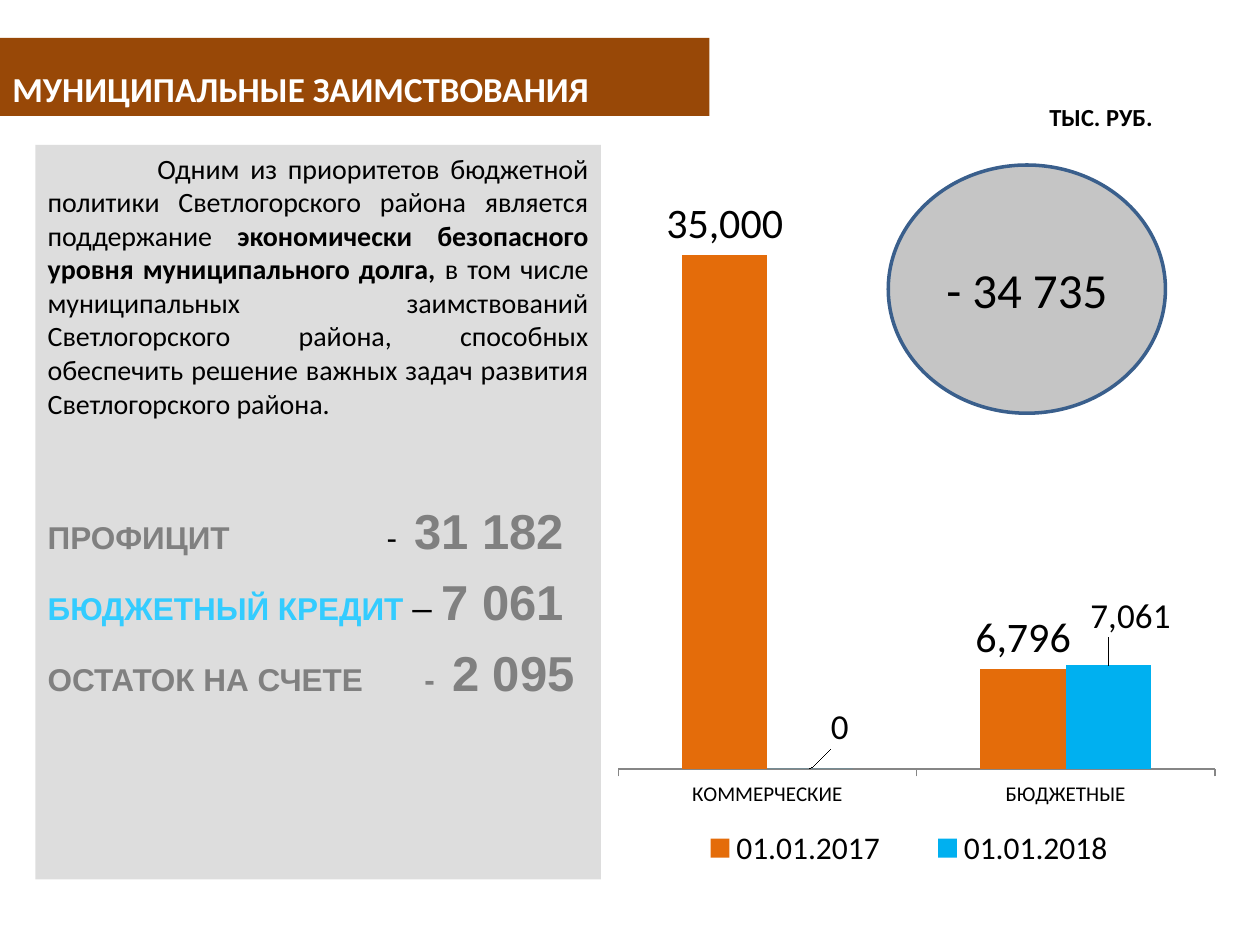
from pptx import Presentation
from pptx.chart.data import CategoryChartData as Data
from pptx.dml.color import RGBColor
from pptx.enum.chart import XL_CHART_TYPE as Kind, XL_LABEL_POSITION as Spot
from pptx.enum.chart import XL_LEGEND_POSITION as Side, XL_TICK_MARK as Tick
from pptx.enum.shapes import MSO_SHAPE as Form
from pptx.enum.text import MSO_ANCHOR as Anchor, PP_ALIGN as Align
from pptx.oxml.ns import qn
from pptx.util import Inches, Pt
from lxml.etree import SubElement, Element

BLACK, WHITE, GREY = "000000", "FFFFFF", "808080"
ORANGE, BLUE, SKY = "E46C0A", "00B0F0", "33CCFF"


def paint(target, color):
    target.rgb = RGBColor.from_string(color)


def style(font, size, color=BLACK, bold=False, face="Calibri"):
    font.size, font.bold, font.name = Pt(size), bold, face
    paint(font.color, color)


def write(par, text, **fmt):
    """Add one run with its format to a paragraph."""
    run = par.add_run()
    run.text = text
    style(run.font, **fmt)


def tabs(par, *stops):
    """Set left tab stops, in inches from the text edge."""
    box = SubElement(par._p.get_or_add_pPr(), qn("a:tabLst"))
    for stop in stops:
        SubElement(box, qn("a:tab"), pos=str(Inches(stop)), algn="l")


def layout(**parts):
    """Make a manual chart layout from fractions and modes."""
    root = Element(qn("c:layout"))
    hand = SubElement(root, qn("c:manualLayout"))
    for name, val in parts.items():
        SubElement(hand, qn("c:" + name), val=str(val))
    return root


class Deck:
    def __init__(self):
        self.prs = Presentation()
        self.prs.slide_width, self.prs.slide_height = Inches(10), Inches(7.5)
        self.slide = self.prs.slides.add_slide(self.prs.slide_layouts[6])

    def shape(self, form, at, fill, alpha=100, line=None, anchor=Anchor.TOP):
        item = self.slide.shapes.add_shape(form, *map(Inches, at))
        item.shadow.inherit = False
        item.fill.solid()
        paint(item.fill.fore_color, fill)
        if alpha < 100:
            tint = item.fill._xPr.find(".//" + qn("a:srgbClr"))
            SubElement(tint, qn("a:alpha"), val=str(alpha * 1000))
        if line:
            paint(item.line.color, line)
            item.line.width = Pt(2)
        else:
            item.line.fill.background()
        frame = item.text_frame
        frame.word_wrap, frame.vertical_anchor = True, anchor
        frame.paragraphs[0].alignment = Align.LEFT
        return frame

    def label(self, at, text, **fmt):
        frame = self.slide.shapes.add_textbox(*map(Inches, at)).text_frame
        frame.word_wrap = True
        write(frame.paragraphs[0], text, **fmt)

    def chart(self, at, cats, rows):
        """Draw clustered columns; rows hold name, values, colour, label size."""
        data = Data(number_format="#,##0")
        data.categories = cats
        for name, vals, *_ in rows:
            data.add_series(name, vals)
        chart = self.slide.shapes.add_chart(
            Kind.COLUMN_CLUSTERED, *map(Inches, at), data).chart
        style(chart.font, 18)
        chart.has_title = False
        chart.has_legend = True
        legend = chart.legend
        legend.position, legend.include_in_layout = Side.BOTTOM, False
        legend._element.find(qn("c:legendPos")).addnext(layout(
            xMode="edge", yMode="edge", x=0.23, y=0.89, w=0.66, h=0.06))

        axis = chart.category_axis
        style(axis.tick_labels.font, 12)
        axis.major_tick_mark = Tick.OUTSIDE
        paint(axis.format.line.color, "868686")
        value = chart.value_axis
        value.visible = value.has_major_gridlines = False
        value.minimum_scale, value.maximum_scale = 0, 40000

        area = chart._chartSpace.chart.plotArea
        for old in area.findall(qn("c:layout")):
            area.remove(old)
        area.insert(0, layout(layoutTarget="inner", xMode="edge", yMode="edge",
                              x=0.17, y=0.035, w=0.8, h=0.78))
        plot = chart.plots[0]
        plot.gap_width, plot.overlap, plot.vary_by_categories = 150, 0, False
        for series, (_, _, color, size) in zip(plot.series, rows):
            series.format.fill.solid()
            paint(series.format.fill.fore_color, color)
            marks = series.data_labels
            style(marks.font, size)
            marks.show_value, marks.position = True, Spot.OUTSIDE_END
            marks.number_format, marks.number_format_is_linked = "#,##0", False
        return plot

    def nudge(self, point, x, y, size):
        """Shift one data label by fractions of the chart."""
        mark = point.data_label
        style(mark.font, size)
        mark.position = Spot.OUTSIDE_END
        mark._dLbl.insert(1, layout(x=x, y=y))


def main():
    deck = Deck()
    title = deck.shape(Form.RECTANGLE, (0, 0.3, 5.63, 0.62), "984807",
                       anchor=Anchor.BOTTOM)
    write(title.paragraphs[0], "МУНИЦИПАЛЬНЫЕ ЗАИМСТВОВАНИЯ",
          size=20, color=WHITE, bold=True)

    plot = deck.chart((3.9, 1.23, 5.92, 5.98), ["КОММЕРЧЕСКИЕ", "БЮДЖЕТНЫЕ"], [
        ("01.01.2017", (35000, 6796), ORANGE, 24),
        ("01.01.2018", (0, 7061), BLUE, 20)])
    points = plot.series[1].points
    deck.nudge(points[0], 0.04, -0.02, 20)
    deck.nudge(points[1], 0.03, -0.03, 20)

    body = deck.shape(Form.RECTANGLE, (0.28, 1.15, 4.49, 5.83), "D9D9D9", 87)
    intro = body.paragraphs[0]
    intro.alignment = Align.JUSTIFY
    intro._p.get_or_add_pPr().set("indent", str(Inches(0.87)))
    for text, bold in [
            ("Одним из приоритетов бюджетной политики Светлогорского района "
             "является поддержание ", False),
            ("экономически безопасного уровня муниципального долга,", True),
            (" в том числе муниципальных заимствований Светлогорского района, "
             "способных обеспечить решение важных задач развития "
             "Светлогорского района.", False)]:
        write(intro, text, size=16, bold=bold)

    for gap, stops, name, tone, dash, mark, total in [
            (46, (2.69, 2.91), "ПРОФИЦИТ", GREY, "\t-\t", (18, BLACK, False), "31 182"),
            (7, (), "БЮДЖЕТНЫЙ КРЕДИТ ", SKY, "– ", (20, BLACK, False), "7 061"),
            (7, (2.99, 3.21), "ОСТАТОК НА СЧЕТЕ", GREY, "\t-\t", (18, GREY, True), "2 095")]:
        row = body.add_paragraph()
        row.alignment, row.space_before = Align.LEFT, Pt(gap)
        if stops:
            tabs(row, *stops)
        size, color, bold = mark
        write(row, name, size=18, color=tone, bold=True, face="Arial")
        write(row, dash, size=size, color=color, bold=bold, face="Arial")
        write(row, total, size=28, color=GREY, bold=True, face="Arial")

    change = deck.shape(Form.OVAL, (7.05, 1.31, 2.2, 1.97), "A6A6A6", 65,
                        "3A5F8C", Anchor.MIDDLE)
    change.paragraphs[0].alignment = Align.CENTER
    write(change.paragraphs[0], "- 34 735", size=28)
    deck.label((8.23, 0.76, 1.5, 0.34), "ТЫС. РУБ.", size=14, bold=True)
    deck.prs.save("out.pptx")


if __name__ == "__main__":
    main()
